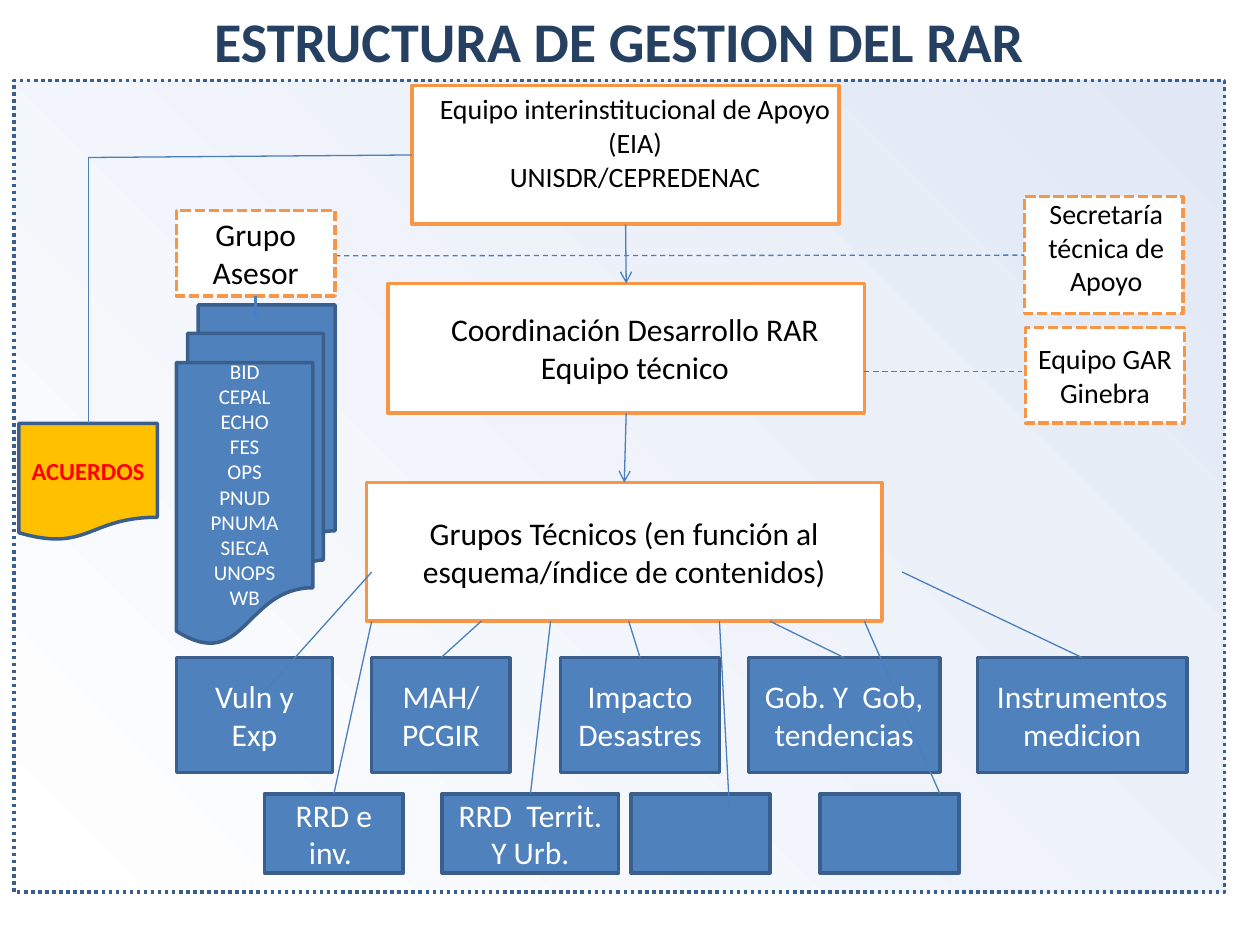
from lxml.etree import SubElement
from pptx import Presentation
from pptx.dml.color import RGBColor
from pptx.enum.dml import MSO_LINE
from pptx.enum.shapes import MSO_CONNECTOR, MSO_SHAPE
from pptx.enum.text import MSO_ANCHOR, PP_ALIGN
from pptx.oxml.ns import qn
from pptx.util import Emu, Pt

SCALE = 9144  # EMU in one px, 100 px to the inch
BLUE, EDGE, WIRE = "4F81BD", "3A5F8C", "4B7EBC"
ORANGE, WHITE, BLACK = "F79646", "FFFFFF", "000000"
TOP, LEFT, BOTTOM = 0, 1, 2


def px(n):
    return Emu(n * SCALE)


def rgb(code):
    return RGBColor.from_string(code)


def write(shape, text, size, color, bold=False, anchor=MSO_ANCHOR.MIDDLE):
    frame = shape.text_frame
    frame.word_wrap = True
    frame.vertical_anchor = anchor
    frame.text = text
    for para in frame.paragraphs:
        para.alignment = PP_ALIGN.CENTER
        for run in para.runs:
            font = run.font
            font.name, font.size, font.bold = "Calibri", Pt(size), bold
            font.color.rgb = rgb(color)


def place(shape, at):
    shape.left, shape.top, shape.width, shape.height = map(px, at)


def box(slide, at, fill=BLUE, line=EDGE, dash=None, kind=MSO_SHAPE.RECTANGLE):
    shape = slide.shapes.add_shape(kind, *map(px, at))
    shape.shadow.inherit = False
    shape.fill.solid()
    shape.fill.fore_color.rgb = rgb(fill)
    shape.line.color.rgb = rgb(line)
    shape.line.width = Pt(2)
    if dash:
        shape.line.dash_style = dash
    return shape


def frame(slide, at, dash=None):
    return box(slide, at, WHITE, ORANGE, dash)


def label(slide, at, text, size):
    shape = slide.shapes.add_textbox(*map(px, at))
    write(shape, text, size, BLACK, anchor=MSO_ANCHOR.TOP)


def link(slide, ends, begin=None, end=None, width=0.75, dash=None, arrow=False):
    wire = slide.shapes.add_connector(MSO_CONNECTOR.STRAIGHT, *map(px, ends))
    if begin:
        wire.begin_connect(*begin)
    if end:
        wire.end_connect(*end)
    wire.line.color.rgb = rgb(WIRE)
    wire.line.width = Pt(width)
    if dash:
        wire.line.dash_style = dash
    if arrow:
        SubElement(wire.line._get_or_add_ln(), qn("a:tailEnd"), type="arrow")
    SubElement(wire._element.spPr, qn("a:effectLst"))


def panel(slide):
    back = box(slide, (11, 64, 961, 644), dash=MSO_LINE.ROUND_DOT)
    back.fill.gradient()
    back.fill.gradient_angle = 45
    for stop, color in zip(back.fill.gradient_stops, (WHITE, "E1E8F5")):
        stop.color.rgb = rgb(color)


def core(slide):
    """Central chain of teams; returns the top team and the offices' parent."""
    team = frame(slide, (327, 68, 339, 110))
    lead = frame(slide, (308, 225, 378, 103))
    group = frame(slide, (291, 383, 409, 110))
    write(group, "Grupos Técnicos (en función al esquema/índice de contenidos)",
          18, BLACK)
    link(slide, (496, 178, 497, 225), (team, BOTTOM), (lead, TOP), arrow=True)
    link(slide, (497, 328, 496, 383), (lead, BOTTOM), (group, TOP), arrow=True)
    label(slide, (327, 68, 354, 91),
          "Equipo interinstitucional de Apoyo (EIA)\nUNISDR/CEPREDENAC", 16)
    label(slide, (327, 241, 354, 71),
          "Coordinación Desarrollo RAR\nEquipo técnico", 18)
    return team


def topics(slide):
    """Two rows of topic boxes: left, width, text, start of line, free end."""
    rows = (
        (522, 91, (
            (140, 124, "Vuln y Exp", (295, 454), (209, 550)),
            (295, 110, "MAH/\nPCGIR", (382, 493), None),
            (445, 126, "Impacto Desastres", (499, 493), None),
            (594, 152, "Gob. Y  Gob, tendencias", (611, 493), None),
            (776, 166, "Instrumentos medicion", (716, 454), None))),
        (630, 63, (
            (210, 110, "RRD e inv. ", (295, 493), None),
            (351, 140, "RRD  Territ. Y Urb.", (437, 493), None),
            (501, 110, "", (571, 493), (579, 643)),
            (651, 110, "", (686, 493), (746, 630)))),
    )
    wires = []
    for top, high, cells in rows:
        for left, wide, text, start, stop in cells:
            cell = box(slide, (left, top, wide, high))
            if text:
                write(cell, text, 18, WHITE)
            join = None if stop else (cell, TOP)
            wires.append((start + (stop or (left + wide // 2, top)), join))
    for ends, join in wires:
        link(slide, ends, end=join)


def support(slide):
    """Offices on the right."""
    desk = frame(slide, (813, 156, 126, 93), MSO_LINE.SQUARE_DOT)
    label(slide, (815, 151, 126, 91), "Secretaría técnica de Apoyo", 16)
    link(slide, (266, 203, 812, 203), end=(desk, LEFT), dash=MSO_LINE.DASH)
    gar = frame(slide, (814, 260, 126, 76), MSO_LINE.SQUARE_DOT)
    write(gar, "Equipo GAR Ginebra", 16, BLACK)
    link(slide, (686, 295, 811, 295), dash=MSO_LINE.DASH)


def advice(slide, team):
    """Agreements and advisers on the left."""
    deal = box(slide, (15, 336, 110, 93), "FFC000",
               kind=MSO_SHAPE.FLOWCHART_DOCUMENT)
    write(deal, "ACUERDOS", 14, "FF0000", bold=True)
    link(slide, (327, 123, 70, 125), begin=(team, LEFT))
    link(slide, (70, 125, 70, 336), end=(deal, TOP))

    panel_box = frame(slide, (140, 167, 126, 68), MSO_LINE.SQUARE_DOT)
    write(panel_box, "Grupo Asesor", 18, BLACK)
    names = "BID CEPAL ECHO FES OPS PNUD PNUMA SIECA UNOPS WB".split()
    stack = box(slide, (140, 242, 126, 269),
                kind=MSO_SHAPE.FLOWCHART_MULTIDOCUMENT)
    write(stack, "\n".join(names), 12, WHITE)
    stack.text_frame.margin_bottom = px(25)
    link(slide, (203, 235, 203, 252), begin=(panel_box, BOTTOM), width=1.5)


def main():
    deck = Presentation()
    deck.slide_width, deck.slide_height = px(1000), px(750)
    slide = deck.slides.add_slide(deck.slide_layouts[5])
    title = slide.shapes.title
    place(title, (11, 0, 961, 64))
    write(title, "ESTRUCTURA DE GESTION DEL RAR", 32, "254061", bold=True,
          anchor=MSO_ANCHOR.TOP)
    panel(slide)
    team = core(slide)
    topics(slide)
    support(slide)
    advice(slide, team)
    deck.save("out.pptx")


if __name__ == "__main__":
    main()
